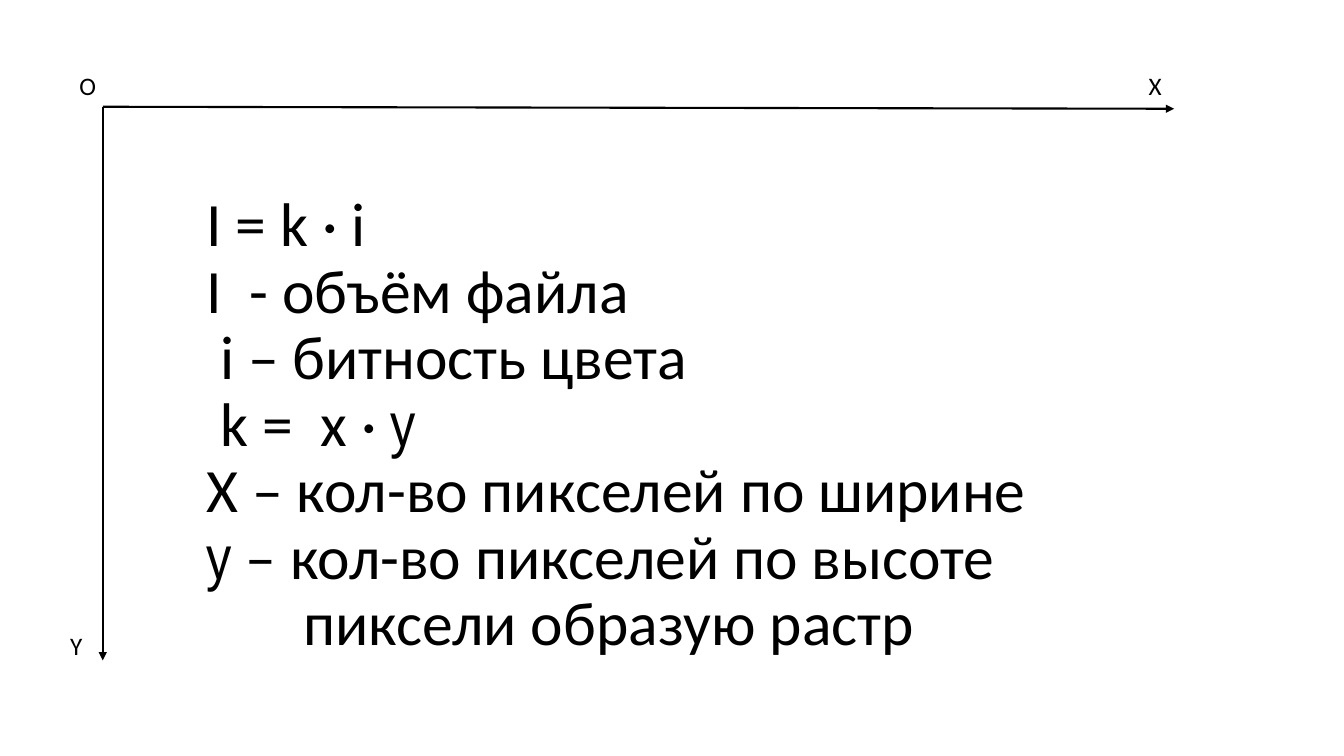
"""Build the slide on image file size with its pixel coordinate axes."""
from dataclasses import dataclass

from lxml import etree
from pptx import Presentation
from pptx.dml.color import RGBColor
from pptx.enum.shapes import MSO_CONNECTOR
from pptx.enum.text import MSO_ANCHOR, MSO_AUTO_SIZE
from pptx.oxml.ns import qn
from pptx.slide import Slide
from pptx.text.text import TextFrame, _Paragraph
from pptx.util import Cm, Pt

STRAIGHT = MSO_CONNECTOR.STRAIGHT
TOP = MSO_ANCHOR.TOP
FIT_SHAPE = MSO_AUTO_SIZE.SHAPE_TO_FIT_TEXT


@dataclass(frozen=True)
class Theme:
    ink: RGBColor = RGBColor(0, 0, 0)
    font: str = "Calibri"
    variable_font: str = "Arial Narrow"
    label_size: Pt = Pt(18)
    formula_size: Pt = Pt(44)
    axis_width: Pt = Pt(1.5)
    line_spacing: float = 0.9


@dataclass(frozen=True)
class Axis:
    end_x: float
    end_y: float


@dataclass(frozen=True)
class AxisLabel:
    text: str
    left: float
    top: float
    width: float
    wrap: bool = False


@dataclass(frozen=True)
class FormulaLine:
    text: str
    variable: str = ""
    rest: str = ""
    indent: float = 0


THEME = Theme()
ORIGIN = (2.59, 2.69)
AXES = (Axis(29.59, 2.74), Axis(2.59, 16.64))
LABELS = (
    AxisLabel("О", 1.75, 1.65, 0.94),
    AxisLabel("Х", 28.7, 1.65, 0.86),
    AxisLabel("Y", 1.52, 15.75, 0.79, wrap=True),
)
FORMULA_LINES = (
    FormulaLine("I = k · i"),
    FormulaLine("I  - объём файла"),
    FormulaLine("i – битность цвета", indent=0.35),
    FormulaLine("k =  x · ", "y", indent=0.35),
    FormulaLine("X – кол-во пикселей по ширине"),
    FormulaLine("", "y", " – кол-во пикселей по высоте"),
    FormulaLine("пиксели образую растр", indent=2.45),
)


def add_text_frame(slide: Slide, left: float, top: float, width: float, height: float) -> TextFrame:
    """Add a text box given in centimetres and return its frame."""
    frame = slide.shapes.add_textbox(Cm(left), Cm(top), Cm(width), Cm(height)).text_frame
    frame.word_wrap = True
    frame.vertical_anchor = TOP
    return frame


def style_paragraph(paragraph: _Paragraph, size: Pt) -> None:
    """Give a paragraph the theme font and colour."""
    paragraph.font.name = THEME.font
    paragraph.font.size = size
    paragraph.font.color.rgb = THEME.ink


def draw_axis(slide: Slide, axis: Axis) -> None:
    """Draw an arrow from the origin to the end of an axis."""
    start_x, start_y = ORIGIN
    arrow = slide.shapes.add_connector(
        STRAIGHT, Cm(start_x), Cm(start_y), Cm(axis.end_x), Cm(axis.end_y)
    )
    arrow.line.color.rgb = THEME.ink
    arrow.line.width = THEME.axis_width
    etree.SubElement(arrow.line._get_or_add_ln(), qn("a:tailEnd"), type="triangle")
    etree.SubElement(arrow._element.spPr, qn("a:effectLst"))


def draw_label(slide: Slide, label: AxisLabel) -> None:
    """Write the letter at an end of an axis."""
    frame = add_text_frame(slide, label.left, label.top, label.width, 1.03)
    frame.word_wrap = label.wrap
    frame.auto_size = FIT_SHAPE
    letter = frame.paragraphs[0]
    letter.text = label.text
    style_paragraph(letter, THEME.label_size)


def write_formula_line(paragraph: _Paragraph, line: FormulaLine) -> None:
    """Write a line, setting its variable in the narrow font."""
    style_paragraph(paragraph, THEME.formula_size)
    paragraph.line_spacing = THEME.line_spacing
    if line.indent:
        paragraph._p.get_or_add_pPr().set("marL", str(Cm(line.indent)))
    parts = (
        (line.text, THEME.font),
        (line.variable, THEME.variable_font),
        (line.rest, THEME.font),
    )
    for text, font_name in parts:
        if text:
            run = paragraph.add_run()
            run.text = text
            if line.variable:
                run.font.name = font_name


def draw_formulas(slide: Slide) -> None:
    """Write the formulas and the meaning of their variables."""
    frame = add_text_frame(slide, 4.95, 4.75, 25.4, 13.28)
    for index, line in enumerate(FORMULA_LINES):
        paragraph = frame.add_paragraph() if index else frame.paragraphs[0]
        write_formula_line(paragraph, line)


def main() -> None:
    """Build and save the presentation."""
    presentation = Presentation()
    presentation.slide_width = Cm(33.87)
    presentation.slide_height = Cm(19.05)
    slide = presentation.slides.add_slide(presentation.slide_layouts[6])
    for axis in AXES:
        draw_axis(slide, axis)
    for label in LABELS:
        draw_label(slide, label)
    draw_formulas(slide)
    presentation.save("out.pptx")


if __name__ == "__main__":
    main()
